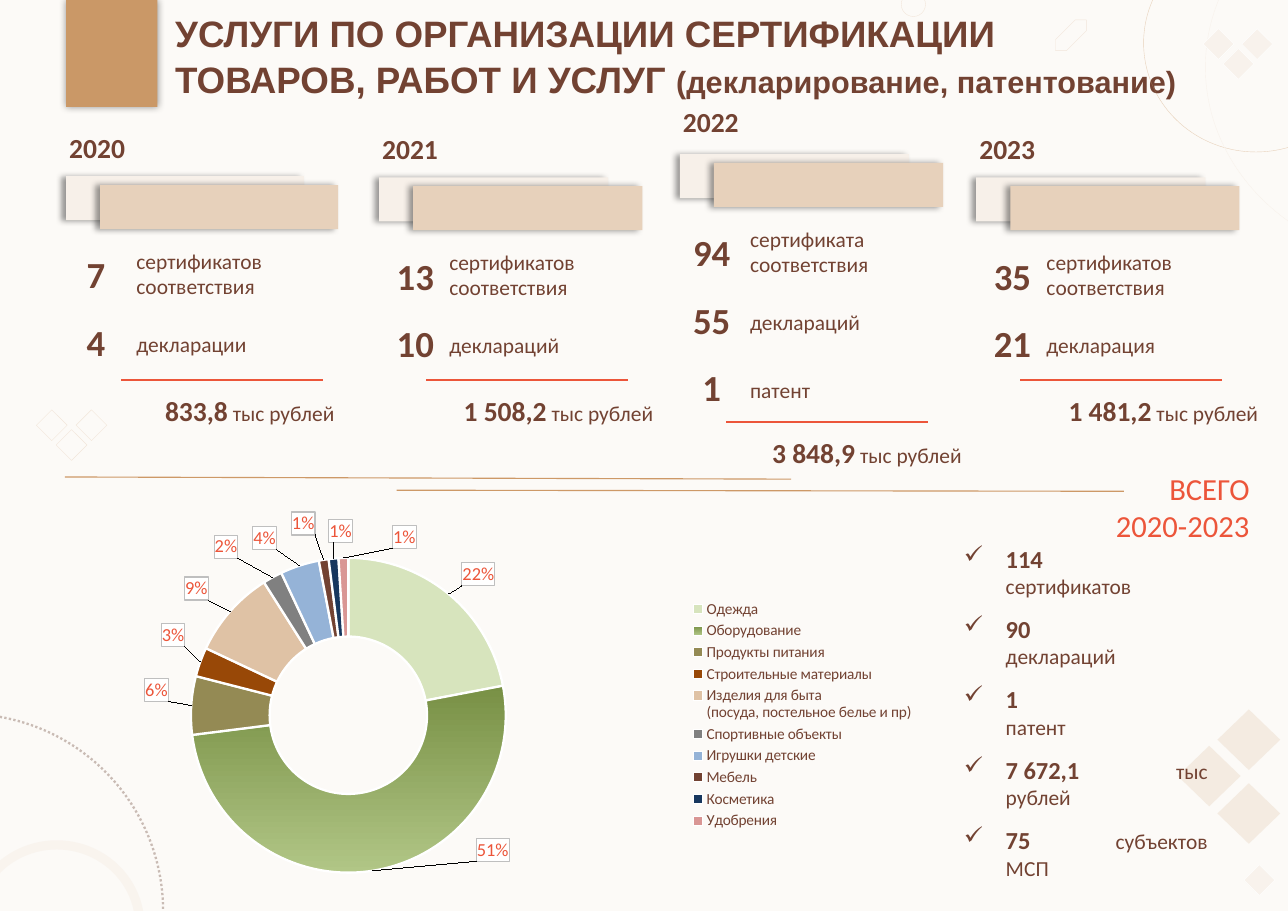
import math

from lxml import etree
from pptx import Presentation
from pptx.chart.data import CategoryChartData
from pptx.dml.color import RGBColor
from pptx.enum.chart import XL_CHART_TYPE, XL_LEGEND_POSITION
from pptx.enum.dml import MSO_LINE
from pptx.enum.shapes import MSO_CONNECTOR, MSO_SHAPE
from pptx.enum.text import MSO_ANCHOR, MSO_AUTO_SIZE, PP_ALIGN
from pptx.oxml import parse_xml
from pptx.oxml.ns import nsdecls, qn
from pptx.util import Inches, Pt

RECT, OVAL, DIAMOND = MSO_SHAPE.RECTANGLE, MSO_SHAPE.OVAL, MSO_SHAPE.DIAMOND
LEFT, CENTER, RIGHT = PP_ALIGN.LEFT, PP_ALIGN.CENTER, PP_ALIGN.RIGHT
TOP, MIDDLE = MSO_ANCHOR.TOP, MSO_ANCHOR.MIDDLE
BROWN, RED, TAN, SAND, PALE = "724232", "EC553A", "CA9867", "F2E6DA", "F8F2EC"

# bar left, bar top, year, year offset, number width, items, rule left, rule top, total left, total
YEARS = [
    (0.6, 1.6, "2020", 0.46, 0.52, [("7", "сертификатов\nсоответствия"), ("4", "декларации")],
     1.1, 3.45, 1.4, "833,8"),
    (3.44, 1.61, "2021", 0.46, 0.64, [("13", "сертификатов\nсоответствия"), ("10", "деклараций")],
     3.87, 3.45, 4.11, "1 508,2"),
    (6.17, 1.4, "2022", 0.5, 0.56,
     [("94", "сертификата\nсоответствия"), ("55", "деклараций"), ("1", "патент")],
     6.59, 3.83, 6.91, "3 848,9"),
    (8.86, 1.61, "2023", 0.46, 0.64, [("35", "сертификатов\nсоответствия"), ("21", "декларация")],
     9.26, 3.45, 9.6, "1 481,2"),
]
TOTALS = [("114", "\vсертификатов"), ("90", "\vдеклараций"), ("1", "\vпатент"),
          ("7 672,1", "\tтыс\vрублей"), ("75", "\tсубъектов\vМСП")]
# category, percent, colour, centre of its label on the slide
GOODS = [
    ("Одежда", 22, "D7E4BD", 4.34, 5.22),
    ("Оборудование", 51, "789045", 4.47, 7.72),
    ("Продукты питания", 6, "948A54", 1.42, 6.27),
    ("Строительные материалы", 3, "984807", 1.57, 5.77),
    ("Изделия для быта\n(посуда, постельное белье и пр)", 9, "DFC2A5", 1.78, 5.35),
    ("Спортивные объекты", 2, "808080", 2.05, 4.97),
    ("Игрушки детские", 4, "95B3D7", 2.4, 4.89),
    ("Мебель", 1, BROWN, 2.75, 4.76),
    ("Косметика", 1, "17375E", 3.09, 4.83),
    ("Удобрения", 1, "D99694", 3.67, 4.88),
]


def rgb(color):
    return RGBColor.from_string(color)


def set_alpha(fill_xml, percent):
    color = fill_xml.find(".//" + qn("a:srgbClr"))
    etree.SubElement(color, qn("a:alpha")).set("val", str(percent * 1000))


def style(sp, fill=None, line=None, width=0.25, fill_alpha=None, line_alpha=None, dash=None):
    sp.shadow.inherit = False
    if fill:
        sp.fill.solid()
        sp.fill.fore_color.rgb = rgb(fill)
        if fill_alpha:
            set_alpha(sp.fill._xPr.find(qn("a:solidFill")), fill_alpha)
    else:
        sp.fill.background()
    if not line:
        sp.line.fill.background()
        return
    sp.line.color.rgb = rgb(line)
    sp.line.width = Pt(width)
    if dash:
        sp.line.dash_style = dash
    if line_alpha:
        set_alpha(sp.line._ln, line_alpha)


def add_shape(slide, kind, x, y, w, h, **look):
    sp = slide.shapes.add_shape(kind, Inches(x), Inches(y), Inches(w), Inches(h))
    style(sp, **look)
    return sp


def add_shadow(sp, blur, dist, angle):
    effects = sp._element.spPr.find(qn("a:effectLst"))
    effects.append(parse_xml(
        f'<a:outerShdw {nsdecls("a")} blurRad="{Pt(blur)}" dist="{Pt(dist)}" dir="{angle * 60000}" '
        'rotWithShape="0"><a:srgbClr val="000000"><a:alpha val="40000"/></a:srgbClr></a:outerShdw>'))


def add_line(slide, x1, y1, x2, y2, color, width):
    c = slide.shapes.add_connector(MSO_CONNECTOR.STRAIGHT, Inches(x1), Inches(y1), Inches(x2), Inches(y2))
    c.line.color.rgb = rgb(color)
    c.line.width = Pt(width)
    etree.SubElement(c._element.spPr, qn("a:effectLst"))


def add_run(p, text, size, color=BROWN, bold=False, font="Calibri"):
    first = len(p.runs)
    for i, line in enumerate(text.split("\v")):
        if i:
            p.add_line_break()
        p.add_run().text = line
    for r in p.runs[first:]:
        r.font.size, r.font.bold, r.font.name = Pt(size), bold, font
        r.font.color.rgb = rgb(color)


def add_text(slide, x, y, w, h, lines, align=LEFT, anchor=TOP):
    """Each line is a list of add_run arguments."""
    tf = slide.shapes.add_textbox(Inches(x), Inches(y), Inches(w), Inches(h)).text_frame
    tf.word_wrap = True
    tf.vertical_anchor = anchor
    for i, runs in enumerate(lines):
        p = tf.add_paragraph() if i else tf.paragraphs[0]
        p.alignment = align
        for run in runs:
            add_run(p, *run)
    return tf


def add_title(slide):
    title = slide.shapes.title
    title.left, title.top, title.width, title.height = Inches(1.59), Inches(0.08), Inches(9.5), Inches(0.84)
    tf = title.text_frame
    tf.auto_size, tf.word_wrap, tf.vertical_anchor = MSO_AUTO_SIZE.NONE, True, TOP
    tf.margin_left = tf.margin_right = tf.margin_bottom = 0
    tf.margin_top = Inches(0.02)
    p = tf.paragraphs[0]
    add_run(p, "УСЛУГИ ПО ОРГАНИЗАЦИИ СЕРТИФИКАЦИИ", 24, BROWN, True, "Arial")
    p2 = tf.add_paragraph()
    add_run(p2, "ТОВАРОВ, РАБОТ И УСЛУГ ", 24, BROWN, True, "Arial")
    add_run(p2, "(декларирование, патентование)", 20, BROWN, True, "Arial")
    p2.space_before = Pt(1)
    p.alignment = p2.alignment = LEFT


def add_decor(slide):
    add_shape(slide, OVAL, 10.38, -0.6, 2.04, 1.98, line=TAN, line_alpha=42)
    add_shape(slide, OVAL, 10.94, -1.18, 4.01, 3.58, line=PALE)
    add_shape(slide, OVAL, -0.24, 7.67, 1.51, 1.47, line="F5ECE3", width=6, line_alpha=42)
    add_shape(slide, OVAL, -2.11, 6.48, 3.59, 3.58, line="836458", width=1.5, line_alpha=42,
              dash=MSO_LINE.ROUND_DOT)
    add_shape(slide, OVAL, 8.18, -0.07, 0.22, 0.22, line=SAND)
    for x, y in [(11.29, 7.85), (10.92, 0.26), (11.1, 0.44), (11.27, 0.26)]:
        add_shape(slide, DIAMOND, x, y, 0.28, 0.28, fill=PALE, line="FFFFFF")
    for x, y in [(0.33, 3.72), (0.51, 3.9), (0.69, 3.72)]:
        add_shape(slide, DIAMOND, x, y, 0.28, 0.28, line=SAND)
    for x, y in [(10.69, 6.77), (11.05, 7.11), (11.05, 6.44)]:
        add_shape(slide, DIAMOND, x, y, 0.57, 0.55, fill=SAND, fill_alpha=73)
    leaf = [(9.86, 0.18), (9.76, 0.18), (9.58, 0.36), (9.58, 0.46), (9.68, 0.46), (9.86, 0.28)]
    points = [(Inches(x), Inches(y)) for x, y in leaf]
    outline = slide.shapes.build_freeform(*points[0])
    outline.add_line_segments(points[1:], close=True)
    style(outline.convert_to_shape(), line=SAND)


def add_year(slide, x, y, year, year_dy, num_w, items, rule_x, rule_y, total_x, total):
    add_text(slide, x - 0.07, y - year_dy, 1.08, 0.4, [[(year, 18, BROWN, True)]])
    bar_w = 2.16 if year == "2020" else 2.08
    for dx, dy, color in [(0, 0, "F7F0E9"), (0.31, 0.08, "E7D1BB")]:
        add_shadow(add_shape(slide, RECT, x + dx, y + dy, bar_w, 0.4, fill=color), 4, 3, 180)
    for i, (number, label) in enumerate(items):
        top = y + 0.69 + 0.61 * i
        lines = label.split("\n")
        add_text(slide, x + 0.01, top, num_w, 0.4, [[(number, 24, BROWN, True)]], CENTER, MIDDLE)
        add_text(slide, x + 0.54, top + (0.06 if len(lines) == 1 else -0.09), 1.84, 0.34,
                 [[(line, 14)] for line in lines])
    add_line(slide, rule_x, rule_y, rule_x + 1.83, rule_y, RED, 1.5)
    add_text(slide, total_x, rule_y + 0.08, 2.0, 0.4, [[(total, 18, BROWN, True), (" тыс рублей", 14)]])


def add_totals(slide):
    heads = [[("ВСЕГО", 20, RED)], [("2020-2023", 20, RED)]]
    tf = add_text(slide, 8.65, 4.22, 2.79, 4.0, heads, RIGHT)
    for i, (number, label) in enumerate(TOTALS):
        p = tf.add_paragraph()
        p.space_before = Pt(10 if i else 0)
        pPr = p._p.get_or_add_pPr()
        pPr.set("marL", str(Inches(0.38)))
        pPr.set("indent", str(-Inches(0.38)))
        etree.SubElement(pPr, qn("a:buChar")).set("char", "✓")
        tabs = etree.SubElement(pPr, qn("a:tabLst"))
        etree.SubElement(tabs, qn("a:tab"), pos=str(Inches(2.57)), algn="r")
        add_run(p, number, 16, BROWN, True)
        add_run(p, label, 14)


def layout_xml(**values):
    parts = "".join(f'<c:{k} val="{v}"/>' for k, v in values.items())
    return f'<c:layout {nsdecls("c")}><c:manualLayout>{parts}</c:manualLayout></c:layout>'


def label_xml(idx, dx, dy):
    shows = "".join(f'<c:show{name} val="{int(name == "Percent")}"/>' for name in
                    ("LegendKey", "Val", "CatName", "SerName", "Percent", "BubbleSize"))
    return parse_xml(
        f'<c:dLbl {nsdecls("c", "a")}><c:idx val="{idx}"/>{layout_xml(x=round(dx, 4), y=round(dy, 4))}'
        '<c:numFmt formatCode="0%" sourceLinked="0"/>'
        '<c:spPr><a:solidFill><a:srgbClr val="FFFFFF"/></a:solidFill><a:ln w="9525"><a:solidFill>'
        '<a:srgbClr val="BFBFBF"/></a:solidFill></a:ln></c:spPr>'
        '<c:txPr><a:bodyPr/><a:p><a:pPr><a:defRPr sz="1200" b="0"><a:solidFill>'
        f'<a:srgbClr val="{RED}"/></a:solidFill><a:latin typeface="Calibri"/></a:defRPr></a:pPr>'
        f'<a:endParaRPr/></a:p></c:txPr>{shows}</c:dLbl>')


def add_goods_chart(slide):
    x, y, w, h = -1.3, 4.6, 9.7, 3.78
    data = CategoryChartData()
    data.categories = [g[0] for g in GOODS]
    data.add_series("Series 1", [g[1] for g in GOODS])
    chart = slide.shapes.add_chart(XL_CHART_TYPE.DOUGHNUT, Inches(x), Inches(y), Inches(w), Inches(h), data).chart
    chart.has_title = False
    chart.font.size, chart.font.name = Pt(10), "Calibri"
    chart.font.color.rgb = rgb(BROWN)
    chart.has_legend = True
    legend = chart.legend
    legend.position, legend.include_in_layout = XL_LEGEND_POSITION.RIGHT, False
    legend._element.find(qn("c:legendPos")).addnext(parse_xml(
        layout_xml(xMode="edge", yMode="edge", x=0.72, y=0.09, w=0.24, h=0.83)))
    area = chart._chartSpace.chart.plotArea
    for old in area.findall(qn("c:layout")):
        area.remove(old)
    area.insert(0, parse_xml(layout_xml(layoutTarget="inner", xMode="edge", yMode="edge",
                                        x=0.205, y=0.123, w=0.51, h=0.756)))
    plot = chart.plots[0]
    plot.vary_by_categories = True
    plot._element.find(qn("c:holeSize")).set("val", "50")
    series = plot.series[0]
    labels = series.data_labels
    labels.show_percentage, labels.show_value = True, False
    # Labels are moved from the middle of the ring to their places outside it
    passed = 0
    for i, (_, share, color, label_x, label_y) in enumerate(GOODS):
        point = series.points[i].format
        point.fill.solid()
        point.fill.fore_color.rgb = rgb(color)
        point.line.color.rgb = rgb("FFFFFF")
        point.line.width = Pt(1.5)
        angle = 2 * math.pi * (passed + share / 2) / 100
        passed += share
        dx = label_x - (3.16 + 1.07 * math.sin(angle))
        dy = label_y - (6.5 - 1.07 * math.cos(angle))
        labels._element.insert(i, label_xml(i, dx / w, dy / h))
    fill = series.points[1].format.fill
    fill.gradient()
    fill.gradient_angle = 270
    for stop, color in zip(fill.gradient_stops, ("789045", "B1C686")):
        stop.color.rgb = rgb(color)


def main():
    prs = Presentation()
    prs.slide_width, prs.slide_height = Inches(11.69), Inches(8.27)
    slide = prs.slides.add_slide(prs.slide_layouts[5])
    slide.background.fill.solid()
    slide.background.fill.fore_color.rgb = rgb("FCFAF7")
    # Header and ornaments
    add_shadow(add_shape(slide, RECT, 0.6, 0, 0.83, 0.97, fill=TAN), 5, 0, 0)
    add_title(slide)
    add_decor(slide)
    # Results by year
    for year in YEARS:
        add_year(slide, *year)
    # Totals and shares of goods
    add_totals(slide)
    add_goods_chart(slide)
    add_line(slide, 3.6, 4.45, 10.2, 4.46, "CD9967", 0.75)
    add_line(slide, 0.59, 4.33, 7.18, 4.35, "CD9967", 0.75)
    prs.save("out.pptx")


if __name__ == "__main__":
    main()
